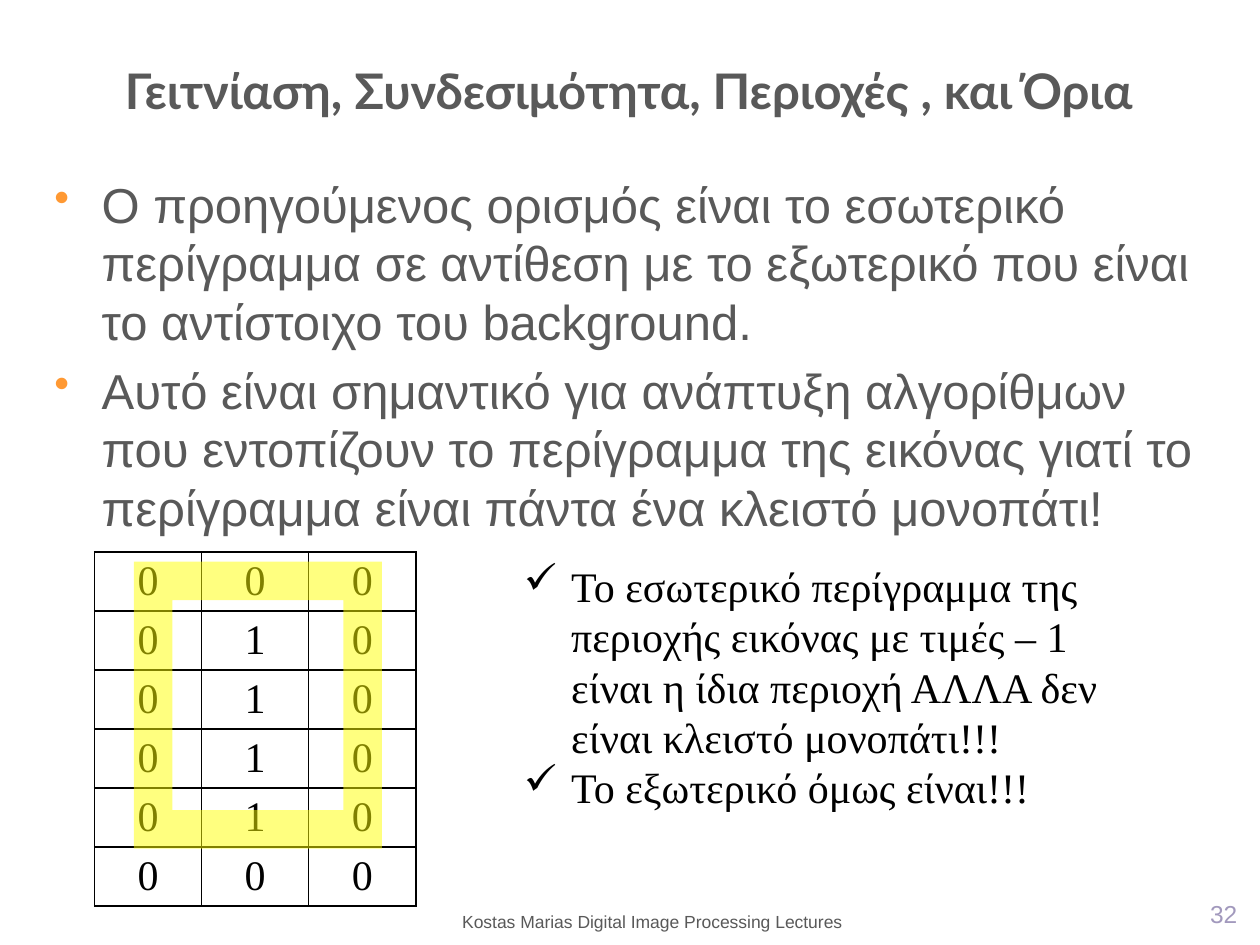
from dataclasses import dataclass

from lxml.etree import SubElement
from pptx import Presentation
from pptx.dml.color import RGBColor
from pptx.enum.shapes import MSO_SHAPE as Shape
from pptx.enum.text import MSO_ANCHOR as Anchor, MSO_AUTO_SIZE as AutoSize, PP_ALIGN as Align
from pptx.oxml import parse_xml
from pptx.oxml.ns import nsdecls, qn
from pptx.util import Pt


@dataclass(frozen=True)
class Theme:
    grey: str = "595959"
    black: str = "000000"
    lilac: str = "A299BD"
    orange: str = "FF9933"
    yellow: str = "FFFF00"
    sans: str = "Arial"
    serif: str = "Times New Roman"
    heading: str = "Lato"
    large: int = 28
    medium: int = 24
    number: int = 14
    small: int = 10


THEME = Theme()

TITLE = "Γειτνίαση, Συνδεσιμότητα, Περιοχές , και Όρια"
BODY = [
    "Ο προηγούμενος ορισμός είναι το εσωτερικό περίγραμμα σε αντίθεση με το "
    "εξωτερικό που είναι το αντίστοιχο του background.",
    "Αυτό είναι σημαντικό για ανάπτυξη αλγορίθμων που εντοπίζουν το περίγραμμα "
    "της εικόνας γιατί το περίγραμμα είναι πάντα ένα κλειστό μονοπάτι!",
]
REMARKS = [
    "Το εσωτερικό περίγραμμα της περιοχής εικόνας με τιμές – 1 είναι η ίδια "
    "περιοχή ΑΛΛΑ δεν είναι κλειστό μονοπάτι!!!",
    "Το εξωτερικό όμως είναι!!!",
]
PIXELS = ["000", "010", "010", "010", "010", "000"]
FOOTER = "Kostas Marias Digital Image Processing Lectures"
SLIDE_NUMBER = "32"

COLUMN_WIDTH, ROW_HEIGHT = 61.2, 33.75
BULLET_INDENT = 27


def points(*lengths):
    return [Pt(length) for length in lengths]


def apply(target, **values):
    for name, value in values.items():
        setattr(target, name, value)


def set_font(paragraph, size, name, color, bold=False):
    apply(paragraph.font, size=Pt(size), name=name, bold=bold)
    paragraph.font.color.rgb = RGBColor.from_string(color)


def add_bullet(paragraph, char, color=None, percent=100):
    properties = paragraph._p.get_or_add_pPr()
    properties.set("marL", str(Pt(BULLET_INDENT)))
    properties.set("indent", str(-Pt(BULLET_INDENT)))
    if color:
        bullet_color = SubElement(properties, qn("a:buClr"))
        SubElement(bullet_color, qn("a:srgbClr"), val=color)
    SubElement(properties, qn("a:buSzPct"), val=str(percent * 1000))
    SubElement(properties, qn("a:buChar"), char=char)


def write(frame, texts, font, align=Align.LEFT, anchor=Anchor.TOP,
          bullet=None, line_height=None, gap=0):
    apply(frame, word_wrap=True, auto_size=AutoSize.NONE, vertical_anchor=anchor)
    for index, text in enumerate(texts):
        paragraph = frame.add_paragraph() if index else frame.paragraphs[0]
        paragraph.text = text
        if bullet:
            add_bullet(paragraph, **bullet)
        paragraph.alignment = align
        if line_height:
            paragraph.line_spacing = Pt(line_height)
        if index:
            paragraph.space_before = Pt(gap)
        set_font(paragraph, *font)


def add_text(slide, box, texts, font, **options):
    write(slide.shapes.add_textbox(*points(*box)).text_frame, texts, font, **options)


def add_borders(cell, color, width):
    properties = cell._tc.get_or_add_tcPr()
    for index, side in enumerate(("lnL", "lnR", "lnT", "lnB")):
        properties.insert(index, parse_xml(
            f'<a:{side} {nsdecls("a")} w="{Pt(width)}"><a:solidFill>'
            f'<a:srgbClr val="{color}"/></a:solidFill></a:{side}>'))


def add_pixel_table(slide, left, top):
    row_count, column_count = len(PIXELS), len(PIXELS[0])
    size = column_count * COLUMN_WIDTH, row_count * ROW_HEIGHT
    table = slide.shapes.add_table(
        row_count, column_count, *points(left, top, *size)).table
    apply(table, first_row=False, horz_banding=False)
    for column in table.columns:
        column.width = Pt(COLUMN_WIDTH)
    for row, values in zip(table.rows, PIXELS):
        row.height = Pt(ROW_HEIGHT)
        for cell, value in zip(row.cells, values):
            apply(cell, text=value, margin_top=0, margin_bottom=0,
                  vertical_anchor=Anchor.MIDDLE)
            paragraph = cell.text_frame.paragraphs[0]
            paragraph.alignment = Align.CENTER
            set_font(paragraph, THEME.medium, THEME.serif, THEME.black)
            cell.fill.background()
            add_borders(cell, THEME.black, 1)


def add_contour(slide, box):
    contour = slide.shapes.add_shape(Shape.FRAME, *points(*box))
    contour.adjustments[0] = 0.155
    contour.shadow.inherit = False
    contour.line.fill.background()
    contour.fill.solid()
    contour.fill.fore_color.rgb = RGBColor.from_string(THEME.yellow)
    color = contour._element.spPr.find(".//" + qn("a:srgbClr"))
    SubElement(color, qn("a:alpha"), val="50000")


def main():
    presentation = Presentation()
    apply(presentation, slide_width=Pt(720), slide_height=Pt(540))
    slide = presentation.slides.add_slide(presentation.slide_layouts[5])

    title = slide.shapes.title
    apply(title, **dict(zip(("left", "top", "width", "height"),
                            points(12.25, 18, 694, 54))))
    write(title.text_frame, [TITLE], (THEME.large, THEME.heading, THEME.grey, True),
          align=Align.CENTER, anchor=Anchor.BOTTOM)

    add_text(slide, (608.4, 512, 105.8, 22.3), [SLIDE_NUMBER],
             (THEME.number, THEME.sans, THEME.lilac),
             align=Align.RIGHT, anchor=Anchor.BOTTOM)
    add_text(slide, (39.6, 517, 666, 19.4), [FOOTER],
             (THEME.small, THEME.sans, THEME.grey), align=Align.CENTER)
    add_text(slide, (24, 96, 672, 414), BODY,
             (THEME.large, THEME.sans, THEME.grey),
             bullet={"char": "•", "color": THEME.orange, "percent": 90},
             line_height=33.5, gap=5.75)
    add_pixel_table(slide, 54, 315.4)
    add_text(slide, (292.3, 316.8, 360, 152.6), REMARKS,
             (THEME.medium, THEME.serif, THEME.black),
             bullet={"char": "✓"}, line_height=28.75)
    add_contour(slide, (76.5, 321, 141.8, 164))

    presentation.save("out.pptx")


if __name__ == "__main__":
    main()
